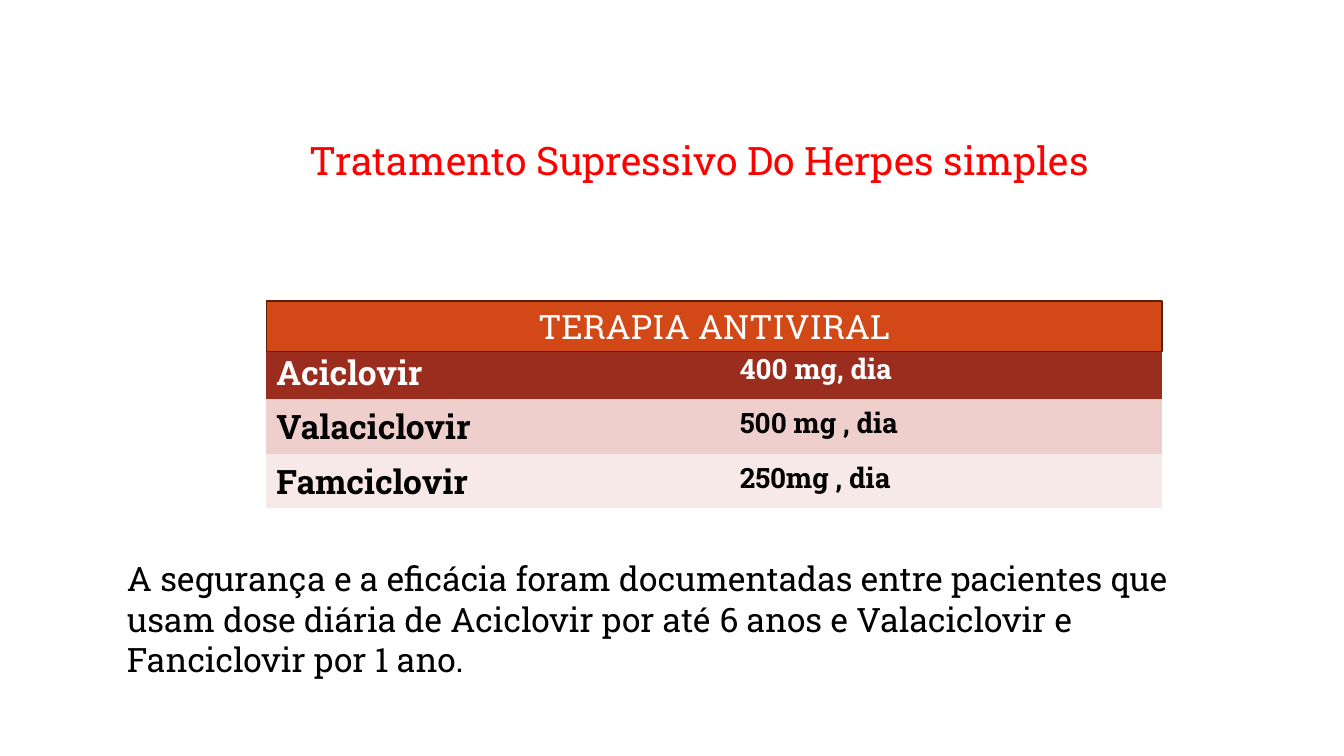
from pptx import Presentation
from pptx.dml.color import RGBColor
from pptx.enum.shapes import MSO_SHAPE
from pptx.enum.text import MSO_ANCHOR, MSO_AUTO_SIZE, PP_ALIGN
from pptx.oxml.ns import qn
from pptx.util import Cm, Pt

RECTANGLE = MSO_SHAPE.RECTANGLE
TOP, MIDDLE = MSO_ANCHOR.TOP, MSO_ANCHOR.MIDDLE
LEFT, CENTER = PP_ALIGN.LEFT, PP_ALIGN.CENTER
NO_AUTOFIT = MSO_AUTO_SIZE.NONE

RED = RGBColor(0xFF, 0x00, 0x00)
WHITE = RGBColor(0xFF, 0xFF, 0xFF)
BLACK = RGBColor(0x00, 0x00, 0x00)
ORANGE = RGBColor(0xD3, 0x48, 0x17)
BROWN = RGBColor(0x5C, 0x20, 0x0A)
BRICK = RGBColor(0x9B, 0x2D, 0x1F)
ROSE = RGBColor(0xEF, 0xCF, 0xCC)
PALE_ROSE = RGBColor(0xF7, 0xE9, 0xE8)

FONT = "Roboto Slab"
PLAIN_TABLE_STYLE = "{2D5ABB26-0587-4C30-8999-92F81FD0307C}"
TABLE_LEFT, TABLE_WIDTH = Cm(6.71), Cm(22.58)
ROW_HEIGHT = Cm(1.27)
COLUMN_WIDTHS = (Cm(11.68), Cm(10.9))
DOSES = (
    ("Aciclovir", "400 mg, dia", BRICK, WHITE),
    ("Valaciclovir", "500 mg , dia", ROSE, BLACK),
    ("Famciclovir", "250mg , dia", PALE_ROSE, BLACK),
)


def write_text(frame, text, size, color, bold=False, align=LEFT):
    para = frame.paragraphs[0]
    para.alignment = align
    span = para.add_run()
    span.text = text
    span.font.name = FONT
    span.font.size = Pt(size)
    span.font.bold = bold
    span.font.color.rgb = color


def add_title(page, text):
    title = page.shapes.title
    title.left, title.top = Cm(6.71), Cm(3.3)
    title.width, title.height = Cm(21.82), Cm(1.45)
    frame = title.text_frame
    frame.word_wrap = True
    frame.auto_size = NO_AUTOFIT
    frame.vertical_anchor = MIDDLE
    write_text(frame, text, 28, RED, align=CENTER)


def add_dose_table(page):
    table = page.shapes.add_table(
        len(DOSES), len(COLUMN_WIDTHS), TABLE_LEFT, Cm(8.69),
        TABLE_WIDTH, ROW_HEIGHT * len(DOSES)
    ).table
    table._tbl.tblPr.find(qn("a:tableStyleId")).text = PLAIN_TABLE_STYLE
    for column, width in zip(table.columns, COLUMN_WIDTHS):
        column.width = width
    for row, (drug, dose, fill, color) in zip(table.rows, DOSES):
        row.height = ROW_HEIGHT
        for cell, text, size in zip(row.cells, (drug, dose), (24, 20)):
            cell.fill.solid()
            cell.fill.fore_color.rgb = fill
            write_text(cell.text_frame, text, size, color, bold=True)


def add_table_banner(page, text):
    banner = page.shapes.add_shape(
        RECTANGLE, TABLE_LEFT, Cm(7.59), TABLE_WIDTH, ROW_HEIGHT
    )
    banner.shadow.inherit = False
    banner.fill.solid()
    banner.fill.fore_color.rgb = ORANGE
    banner.line.color.rgb = BROWN
    banner.line.width = Pt(1)
    banner.text_frame.vertical_anchor = MIDDLE
    write_text(banner.text_frame, text, 24, WHITE, align=CENTER)


def add_note(page, text):
    box = page.shapes.add_textbox(Cm(2.95), Cm(13.94), Cm(28.6), Cm(3.33))
    box.text_frame.word_wrap = True
    box.text_frame.vertical_anchor = TOP
    write_text(box.text_frame, text, 24, BLACK)


def main():
    deck = Presentation()
    deck.slide_width, deck.slide_height = Cm(33.87), Cm(19.05)
    page = deck.slides.add_slide(deck.slide_layouts.get_by_name("Title Only"))
    add_title(page, "Tratamento Supressivo Do Herpes simples")
    add_dose_table(page)
    add_table_banner(page, "TERAPIA ANTIVIRAL")
    add_note(
        page,
        "A segurança e a eficácia foram documentadas entre pacientes que "
        "usam dose diária de Aciclovir por até 6 anos e Valaciclovir e "
        "Fanciclovir por 1 ano.",
    )
    deck.save("out.pptx")


if __name__ == "__main__":
    main()
